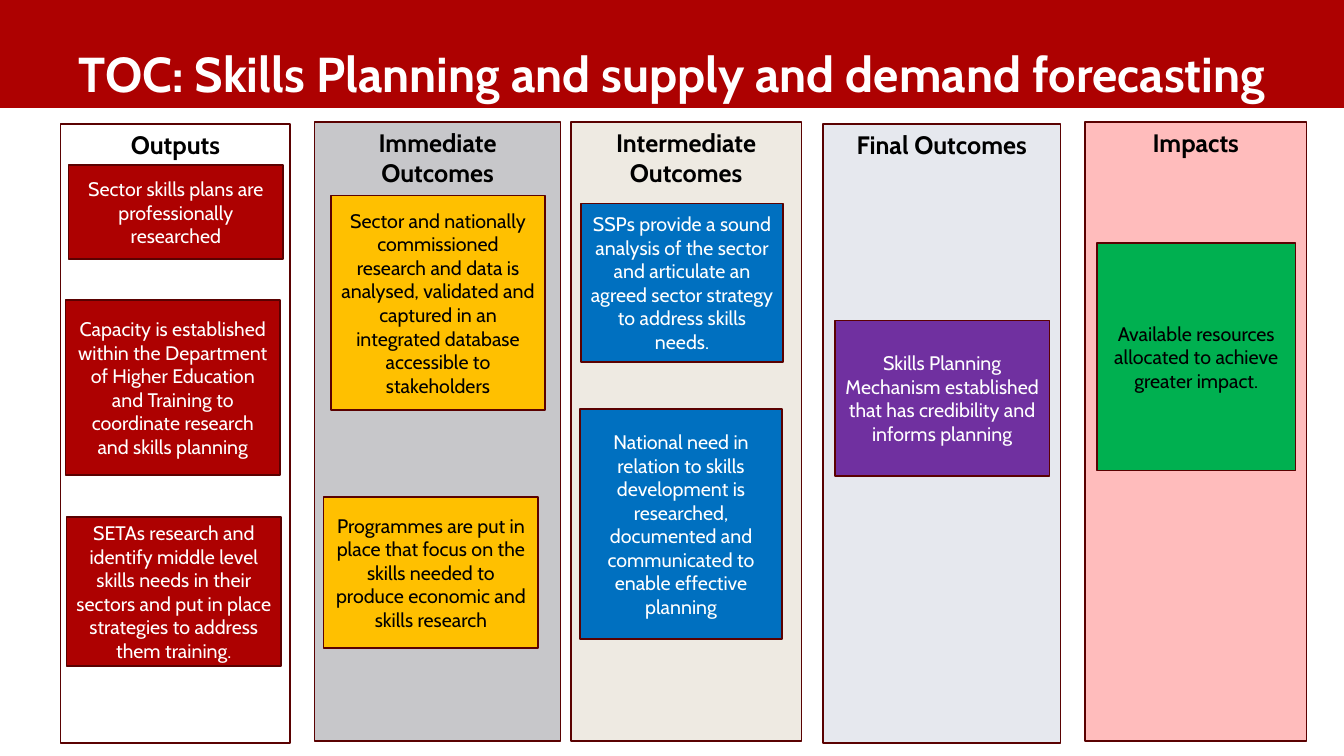
import pptx
import pptx.dml.color
import pptx.enum.shapes
import pptx.enum.text
import pptx.util

RGB = pptx.dml.color.RGBColor
ANCHOR = pptx.enum.text.MSO_ANCHOR
PX = 9144  # EMU per px, 100 px to the inch
FONT = "Cabin"

BLACK = RGB(0x00, 0x00, 0x00)
WHITE = RGB(0xFF, 0xFF, 0xFF)
RED = RGB(0xAD, 0x01, 0x01)
MAROON = RGB(0x5A, 0x01, 0x01)
GREY = RGB(0xC7, 0xC7, 0xCA)
CREAM = RGB(0xEE, 0xEA, 0xE2)
MIST = RGB(0xE6, 0xE8, 0xEE)
PINK = RGB(0xFF, 0xBC, 0xBC)
GOLD = RGB(0xFF, 0xC0, 0x00)
BLUE = RGB(0x00, 0x70, 0xC0)
PURPLE = RGB(0x70, 0x30, 0xA0)
GREEN = RGB(0x00, 0xB0, 0x50)

STAGE_H = 614
# heading, left, top, width, panel fill, card width, card fill, card ink,
# cards as (left, top, height, text)
STAGES = [
    ("Outputs", 60, 123, 228, None, 213, RED, WHITE, [
        (68, 164, 93, "Sector skills plans are professionally researched"),
        (65, 298, 173, "Capacity is established within the Department of Higher "
         "Education and Training to coordinate research and skills planning"),
        (66, 513, 148, "SETAs research and identify middle level skills needs in "
         "their sectors and put in place strategies to address them training."),
    ]),
    ("Immediate Outcomes", 312, 121, 244, GREY, 213, GOLD, BLACK, [
        (328, 194, 213, "Sector and nationally commissioned research and data is "
         "analysed, validated and captured in an integrated database accessible "
         "to stakeholders"),
        (321, 493, 150, "Programmes are put in place that focus on the skills "
         "needed to produce economic and skills research"),
    ]),
    ("Intermediate Outcomes", 566, 121, 229, CREAM, 201, BLUE, WHITE, [
        (576, 202, 157, "SSPs provide a sound analysis of the sector and "
         "articulate an agreed sector strategy to address skills needs."),
        (575, 406, 228, "National need in relation to skills development is "
         "researched, documented and communicated to enable effective planning"),
    ]),
    ("Final Outcomes", 816, 123, 236, MIST, 213, PURPLE, WHITE, [
        (828, 318, 154, "Skills Planning Mechanism established that has "
         "credibility and informs planning"),
    ]),
    ("Impacts", 1076, 121, 220, PINK, 197, GREEN, BLACK, [
        (1088, 241, 226, "Available resources allocated to achieve greater impact."),
    ]),
]


def add_rect(slide, box, fill, line=None):
    rect = slide.shapes.add_shape(
        pptx.enum.shapes.MSO_SHAPE.RECTANGLE, *(n * PX for n in box))
    rect.shadow.inherit = False
    if fill is None:
        rect.fill.background()
    else:
        rect.fill.solid()
        rect.fill.fore_color.rgb = fill
    if line is None:
        rect.line.fill.background()
    else:
        rect.line.color.rgb = line
        rect.line.width = pptx.util.Pt(1.25)
    return rect


def set_text(shape, text, size, ink, anchor, bold=False):
    frame = shape.text_frame
    frame.text = text
    frame.word_wrap = True
    frame.auto_size = pptx.enum.text.MSO_AUTO_SIZE.NONE
    frame.vertical_anchor = anchor
    para = frame.paragraphs[0]
    para.alignment = pptx.enum.text.PP_ALIGN.CENTER
    para.font.name = FONT
    para.font.size = pptx.util.Pt(size)
    para.font.bold = bold
    para.font.color.rgb = ink


def add_title(slide, text):
    """Place the title over a full-width red band."""
    title = slide.shapes.title
    title.left, title.top, title.width, title.height = (
        n * PX for n in (67, 0, 1200, 107))
    set_text(title, text, 35, WHITE, ANCHOR.BOTTOM, bold=True)
    band = add_rect(slide, (0, 0, 1333, 107), RED)
    title.element.addprevious(band.element)


def add_stage(slide, head, left, top, width, fill, card_w, card_fill, ink, cards):
    """Draw one column panel with its heading and cards."""
    panel = add_rect(slide, (left, top, width, STAGE_H), fill, MAROON)
    set_text(panel, head, 18, BLACK, ANCHOR.TOP, bold=True)
    for x, y, height, text in cards:
        card = add_rect(slide, (x, y, card_w, height), card_fill, MAROON)
        set_text(card, text, 14, ink, ANCHOR.MIDDLE)


def main():
    deck = pptx.Presentation()
    deck.slide_width = 1333 * PX
    deck.slide_height = 750 * PX
    slide = deck.slides.add_slide(deck.slide_layouts[5])
    add_title(slide, "TOC: Skills Planning and supply and demand forecasting")
    for stage in STAGES:
        add_stage(slide, *stage)
    deck.save("out.pptx")


if __name__ == "__main__":
    main()
